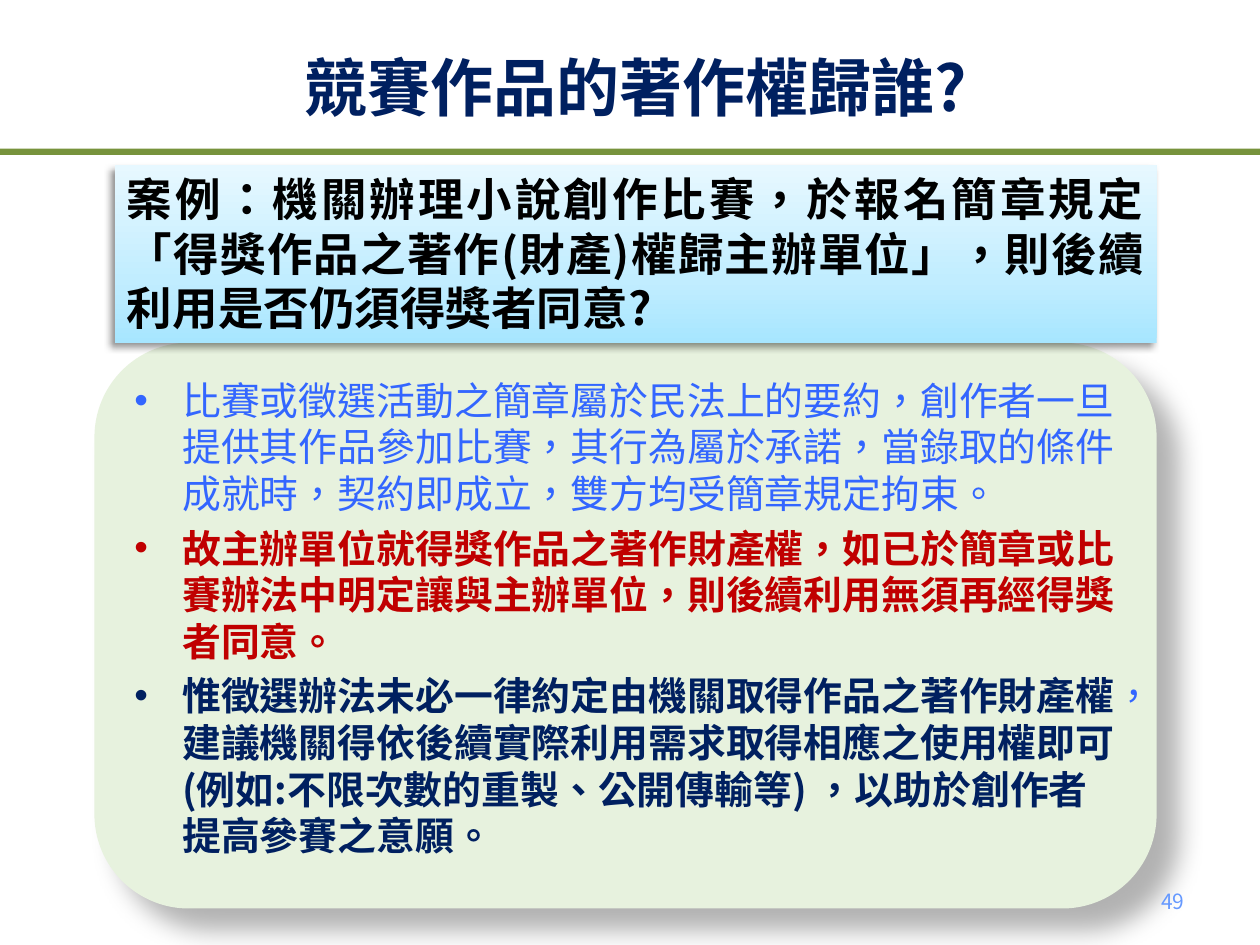
from dataclasses import dataclass

from lxml.etree import SubElement
from pptx import Presentation
from pptx.dml.color import RGBColor
from pptx.enum.shapes import MSO_SHAPE as Shape
from pptx.enum.text import MSO_ANCHOR as Anchor, MSO_AUTO_SIZE as AutoSize, PP_ALIGN as Align
from pptx.oxml.ns import qn
from pptx.util import Inches, Pt


@dataclass(frozen=True)
class Theme:
    font: str = "Noto Sans CJK SC"
    language: str = "zh-TW"
    title_size: float = 36
    case_size: float = 26
    point_size: float = 22.2
    number_size: float = 12
    navy: str = "002060"
    blue: str = "3366FF"
    red: str = "C00000"
    black: str = "000000"
    pale_blue: str = "6699FF"
    rule: str = "77933C"
    panel: str = "E7F2DE"
    case_stops: tuple = ((0, "A7E6FF"), (35, "C1EDFF"), (100, "E7F8FF"))


THEME = Theme()

TITLE = "競賽作品的著作權歸誰?"
CASE = "案例：機關辦理小說創作比賽，於報名簡章規定「得獎作品之著作(財產)權歸主辦單位」，則後續利用是否仍須得獎者同意?"
# Each point is a list of runs: text, colour, bold
POINTS = [
    [("比賽或徵選活動之簡章屬於民法上的要約，創作者一旦提供其作品參加比賽，其行為屬於承諾，"
      "當錄取的條件成就時，契約即成立，雙方均受簡章規定拘束。", THEME.blue, False)],
    [("故主辦單位就得獎作品之著作財產權，如已於簡章或比賽辦法中明定讓與主辦單位，"
      "則後續利用無須再經得獎者同意。", THEME.red, True)],
    [("惟徵選辦法未必一律約定由機關取得作品之著作財產權", THEME.navy, True),
     ("，", THEME.blue, False),
     ("建議機關得依後續實際利用需求取得相應之使用權即可(例如:不限次數的重製、公開傳輸等) ，"
      "以助於創作者提高參賽之意願。", THEME.navy, True)],
]


def add_run(paragraph, text, size, color, bold=False):
    run = paragraph.add_run()
    run.text = text
    run.font.size = Pt(size)
    run.font.bold = bold
    run.font.name = THEME.font
    run.font.color.rgb = RGBColor.from_string(color)
    properties = run.font._element
    properties.set("lang", THEME.language)
    SubElement(properties, qn("a:ea"), typeface=THEME.font)


def set_bullet(paragraph, indent):
    properties = paragraph._p.get_or_add_pPr()
    properties.set("marL", str(indent))
    properties.set("indent", str(-indent))
    SubElement(properties, qn("a:buFont"), typeface="Arial")
    SubElement(properties, qn("a:buChar"), char="•")


def set_shadow(shape, opacity, blur, distance, angle):
    effects = shape._element.spPr.find(qn("a:effectLst"))
    shadow = SubElement(effects, qn("a:outerShdw"), blurRad=str(Pt(blur)), dist=str(Pt(distance)),
                        dir=str(angle * 60000), algn="tl", rotWithShape="0")
    color = SubElement(shadow, qn("a:srgbClr"), val=THEME.black)
    SubElement(color, qn("a:alpha"), val=str(opacity * 1000))


def set_gradient(shape, stops, angle):
    shape.fill.gradient()
    gradient = shape._element.spPr.find(qn("a:gradFill"))
    stop_list = gradient.find(qn("a:gsLst"))
    for old_stop in list(stop_list):
        stop_list.remove(old_stop)
    for position, color in stops:
        stop = SubElement(stop_list, qn("a:gs"), pos=str(position * 1000))
        SubElement(stop, qn("a:srgbClr"), val=color)
    gradient.find(qn("a:lin")).set("ang", str(angle * 60000))


def add_block(slide, preset, left, top, width, height, color=None):
    block = slide.shapes.add_shape(preset, Inches(left), Inches(top), Inches(width), Inches(height))
    block.shadow.inherit = False
    block.line.fill.background()
    if color:
        block.fill.solid()
        block.fill.fore_color.rgb = RGBColor.from_string(color)
    block.text_frame.word_wrap = True
    block.text_frame.vertical_anchor = Anchor.TOP
    return block


def add_title(slide):
    title = slide.shapes.title
    title.left, title.top = Inches(2.32), Inches(0.29)
    title.width, title.height = Inches(6.22), Inches(0.79)
    frame = title.text_frame
    frame.auto_size = AutoSize.NONE
    frame.vertical_anchor = Anchor.MIDDLE
    paragraph = frame.paragraphs[0]
    paragraph.alignment = Align.LEFT
    add_run(paragraph, TITLE, THEME.title_size, THEME.navy, True)


def add_points(slide):
    panel = add_block(slide, Shape.ROUNDED_RECTANGLE, 0.75, 2.72, 8.43, 4.49, THEME.panel)
    set_shadow(panel, opacity=30, blur=15, distance=18, angle=45)
    frame = panel.text_frame
    for index, runs in enumerate(POINTS):
        paragraph = frame.add_paragraph() if index else frame.paragraphs[0]
        paragraph.alignment = Align.LEFT
        if index:
            paragraph.space_before = Pt(4.5)
        set_bullet(paragraph, Inches(0.38))
        for text, color, bold in runs:
            add_run(paragraph, text, THEME.point_size, color, bold)


def add_case(slide):
    case = add_block(slide, Shape.RECTANGLE, 0.91, 1.31, 8.27, 1.41)
    set_gradient(case, THEME.case_stops, angle=270)
    set_shadow(case, opacity=40, blur=4, distance=3, angle=135)
    paragraph = case.text_frame.paragraphs[0]
    paragraph.alignment = Align.JUSTIFY
    add_run(paragraph, CASE, THEME.case_size, THEME.black, True)


def add_page_number(slide, number):
    box = slide.shapes.add_textbox(Inches(7.17), Inches(6.95), Inches(2.33), Inches(0.4))
    box.text_frame.word_wrap = True
    box.text_frame.vertical_anchor = Anchor.MIDDLE
    paragraph = box.text_frame.paragraphs[0]
    paragraph.alignment = Align.RIGHT
    add_run(paragraph, number, THEME.number_size, THEME.pale_blue)


def main():
    deck = Presentation()
    deck.slide_width, deck.slide_height = Inches(10), Inches(7.5)
    slide = deck.slides.add_slide(deck.slide_layouts[5])
    add_block(slide, Shape.RECTANGLE, 0, 1.18, 10, 0.05, THEME.rule)
    add_title(slide)
    add_points(slide)
    add_page_number(slide, "49")
    add_case(slide)
    deck.save("out.pptx")


if __name__ == "__main__":
    main()
